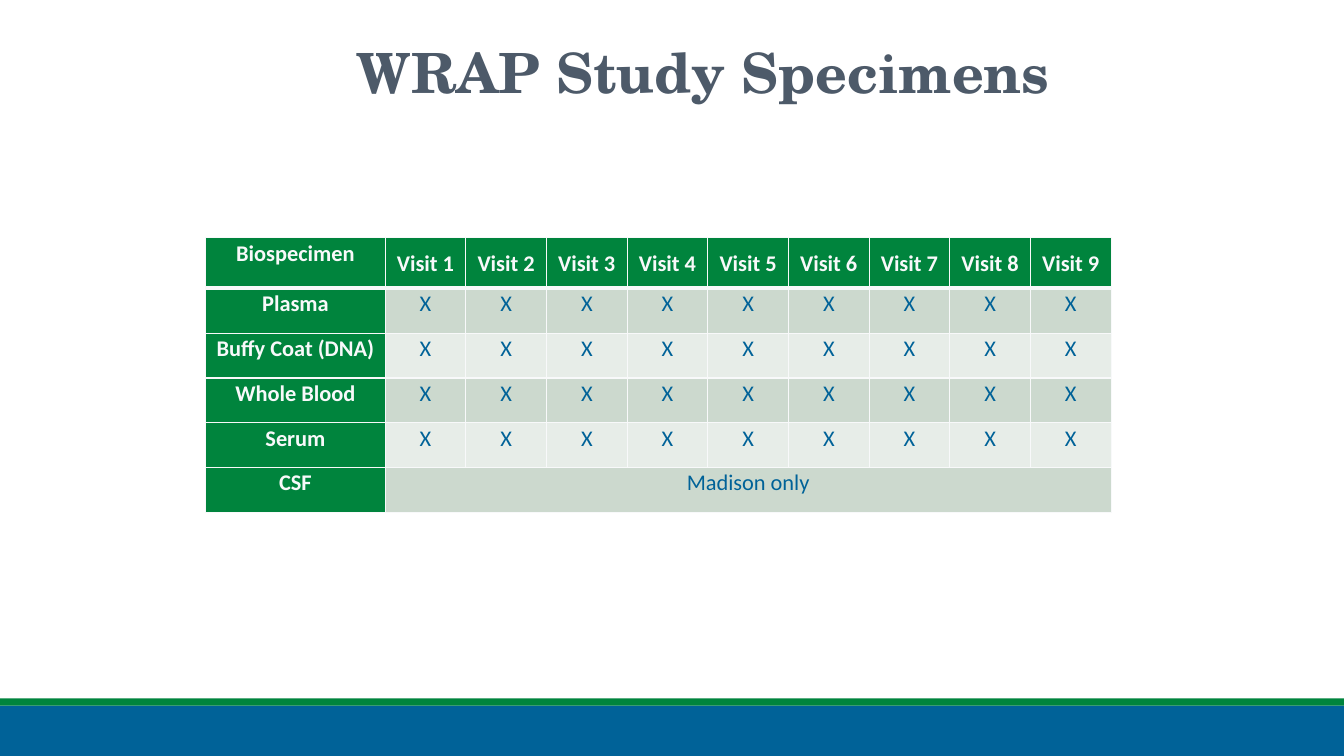
import pptx
import pptx.util
import pptx.dml.color
import pptx.enum.shapes
import pptx.enum.text
import pptx.oxml.ns
from lxml import etree
from pptx.dml.color import RGBColor
from pptx.util import Inches

BLUE = RGBColor(0x00, 0x62, 0x98)
GREEN = RGBColor(0x00, 0x84, 0x3D)
SLATE = RGBColor(0x4D, 0x5A, 0x69)
OFF_WHITE = RGBColor(0xF8, 0xF9, 0xFA)
DARK_BAND = RGBColor(0xCC, 0xD9, 0xCE)
LIGHT_BAND = RGBColor(0xE7, 0xED, 0xE8)

VISITS = 9
SPECIMENS = ["Plasma", "Buffy Coat (DNA)", "Whole Blood", "Serum"]


def add_run(paragraph, text, font_name, size, color, bold):
    run = paragraph.add_run()
    run.text = text
    run.font.name = font_name
    run.font.size = pptx.util.Pt(size)
    run.font.color.rgb = color
    run.font.bold = bold


def add_border(cell, side, points):
    properties = cell._tc.get_or_add_tcPr()
    line = etree.SubElement(properties, pptx.oxml.ns.qn(f"a:ln{side}"),
                            w=str(pptx.util.Pt(points)))
    fill = etree.SubElement(line, pptx.oxml.ns.qn("a:solidFill"))
    etree.SubElement(fill, pptx.oxml.ns.qn("a:srgbClr"), val=str(OFF_WHITE))


presentation = pptx.Presentation()
presentation.slide_width = Inches(13.33)
presentation.slide_height = Inches(7.5)
slide = presentation.slides.add_slide(presentation.slide_layouts[6])

# Footer bars
for top, height, color in [(7, 0.5, BLUE), (6.93, 0.07, GREEN)]:
    bar = slide.shapes.add_shape(pptx.enum.shapes.MSO_SHAPE.RECTANGLE,
                                 0, Inches(top), Inches(13.33), Inches(height))
    bar.shadow.inherit = False
    bar.fill.solid()
    bar.fill.fore_color.rgb = color
    bar.line.fill.background()

# Title
title = slide.shapes.add_textbox(Inches(3.44), Inches(0.12), Inches(7.21), Inches(1.25))
title.text_frame.word_wrap = True
title.text_frame.vertical_anchor = pptx.enum.text.MSO_ANCHOR.MIDDLE
paragraph = title.text_frame.paragraphs[0]
paragraph.line_spacing = 0.9
add_run(paragraph, "WRAP Study Specimens", "TeX Gyre Schola", 39.6, SLATE, True)

# Specimen table
rows = [["Biospecimen"] + [f"Visit {visit}" for visit in range(1, VISITS + 1)]]
rows += [[specimen] + ["X"] * VISITS for specimen in SPECIMENS]
rows.append(["CSF", "Madison only"] + [""] * (VISITS - 1))

table = slide.shapes.add_table(len(rows), VISITS + 1, Inches(2.04), Inches(2.36),
                               Inches(8.96), Inches(2.73)).table
for index, column in enumerate(table.columns):
    column.width = Inches(0.8 if index else 1.78)
for index, row in enumerate(table.rows):
    row.height = Inches(0.445 if index else 0.5)
last_row = len(rows) - 1
table.cell(last_row, 1).merge(table.cell(last_row, VISITS))

for row_index, texts in enumerate(rows):
    for column_index, text in enumerate(texts):
        cell = table.cell(row_index, column_index)
        is_header = row_index == 0 or column_index == 0

        # The rule under the header row is heavier
        for side in "LRTB":
            heavy = (row_index, side) in [(0, "B"), (1, "T")]
            add_border(cell, side, 3 if heavy else 1)
        cell.fill.solid()
        band = DARK_BAND if row_index % 2 else LIGHT_BAND
        cell.fill.fore_color.rgb = GREEN if is_header else band

        cell.margin_left = cell.margin_right = Inches(0.07)
        cell.margin_top = cell.margin_bottom = 0
        if row_index == 0 and column_index > 0:
            cell.vertical_anchor = pptx.enum.text.MSO_ANCHOR.MIDDLE
        if text:
            paragraph = cell.text_frame.paragraphs[0]
            paragraph.alignment = pptx.enum.text.PP_ALIGN.CENTER
            paragraph.line_spacing = 1.07
            add_run(paragraph, text, "Calibri", 16,
                    OFF_WHITE if is_header else BLUE, is_header)

presentation.save("out.pptx")
